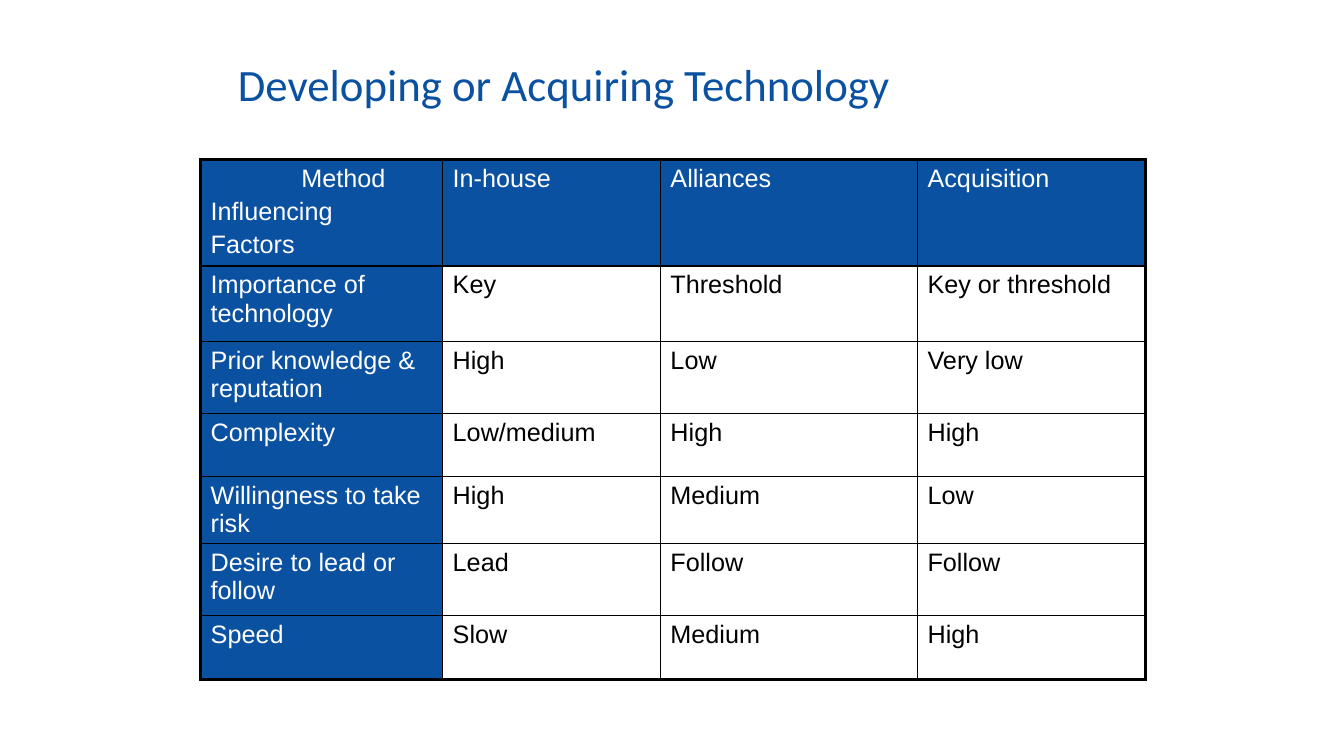
from dataclasses import dataclass

from lxml.etree import SubElement
from pptx import Presentation
from pptx.dml.color import RGBColor as RGB
from pptx.enum.text import MSO_ANCHOR, MSO_AUTO_SIZE, PP_ALIGN
from pptx.oxml.ns import qn
from pptx.util import Inches, Pt


@dataclass(frozen=True)
class Theme:
    blue: str = "0B51A1"
    white: str = "FFFFFF"
    black: str = "000000"
    title_font: str = "Calibri"
    body_font: str = "Arial"
    title_size: int = 32
    body_size: int = 18
    space_before: float = 3.6
    outer_line: float = 2.25
    inner_line: float = 1


THEME = Theme()
METHOD_INDENT = 0.9
COL_WIDTHS = [2.4, 2.16, 2.55, 2.26]
ROW_HEIGHTS = [1.06, 0.75, 0.71, 0.63, 0.63, 0.72, 0.63]
ROWS = [
    ["Method\nInfluencing\nFactors", "In-house", "Alliances", "Acquisition"],
    ["Importance of technology", "Key", "Threshold", "Key or threshold"],
    ["Prior knowledge & reputation", "High", "Low", "Very low"],
    ["Complexity", "Low/medium", "High", "High"],
    ["Willingness to take risk", "High", "Medium", "Low"],
    ["Desire to lead or follow", "Lead", "Follow", "Follow"],
    ["Speed", "Slow", "Medium", "High"],
]


def add_run(p, text, font, size, color):
    r = p.add_run()
    r.text = text
    r.font.name = font
    r.font.size = Pt(size)
    r.font.color.rgb = RGB.from_string(color)


def set_borders(cell, outer):
    """Draw all four cell edges; those named in outer are thick."""
    tc_pr = cell._tc.get_or_add_tcPr()
    for edge in "LRTB":
        width = THEME.outer_line if edge in outer else THEME.inner_line
        ln = SubElement(tc_pr, qn(f"a:ln{edge}"), w=str(Pt(width)))
        fill = SubElement(ln, qn("a:solidFill"))
        SubElement(fill, qn("a:srgbClr"), val=THEME.black)


def fill_cell(cell, text, is_header):
    if is_header:
        cell.fill.solid()
        cell.fill.fore_color.rgb = RGB.from_string(THEME.blue)
    else:
        cell.fill.background()
    color = THEME.white if is_header else THEME.black
    tf = cell.text_frame
    for i, line in enumerate(text.split("\n")):
        p = tf.add_paragraph() if i else tf.paragraphs[0]
        p.space_before = Pt(THEME.space_before)
        add_run(p, line, THEME.body_font, THEME.body_size, color)


def add_title(s, text, left, top, width, height):
    title = s.shapes.title
    title.left, title.top = Inches(left), Inches(top)
    title.width, title.height = Inches(width), Inches(height)
    tf = title.text_frame
    tf.auto_size = MSO_AUTO_SIZE.NONE
    tf.vertical_anchor = MSO_ANCHOR.MIDDLE
    p = tf.paragraphs[0]
    p.alignment = PP_ALIGN.LEFT
    p.line_spacing = 0.9
    add_run(p, text, THEME.title_font, THEME.title_size, THEME.blue)


def add_factor_table(s, left, top):
    last_row, last_col = len(ROWS) - 1, len(COL_WIDTHS) - 1
    table = s.shapes.add_table(
        len(ROWS), len(COL_WIDTHS), Inches(left), Inches(top),
        Inches(sum(COL_WIDTHS)), Inches(sum(ROW_HEIGHTS))).table
    for col, width in zip(table.columns, COL_WIDTHS):
        col.width = Inches(width)
    for row, height in zip(table.rows, ROW_HEIGHTS):
        row.height = Inches(height)

    # Blue first row and column, thick frame around the table
    for i, texts in enumerate(ROWS):
        for j, text in enumerate(texts):
            cell = table.cell(i, j)
            edges = {"L": j == 0, "R": j == last_col,
                     "T": i == 0, "B": i == last_row}
            set_borders(cell, [e for e, on in edges.items() if on])
            fill_cell(cell, text, i == 0 or j == 0)

    # "Method" sits to the right in the corner cell
    method = table.cell(0, 0).text_frame.paragraphs[0]
    method._p.get_or_add_pPr().set("marL", str(Inches(METHOD_INDENT)))


def main():
    prs = Presentation()
    prs.slide_width, prs.slide_height = Inches(13.33), Inches(7.5)
    s = prs.slides.add_slide(prs.slide_layouts[5])
    add_title(s, "Developing or Acquiring Technology", 2.26, 0.51, 9, 0.71)
    add_factor_table(s, 1.99, 1.58)
    prs.save("out.pptx")


if __name__ == "__main__":
    main()
